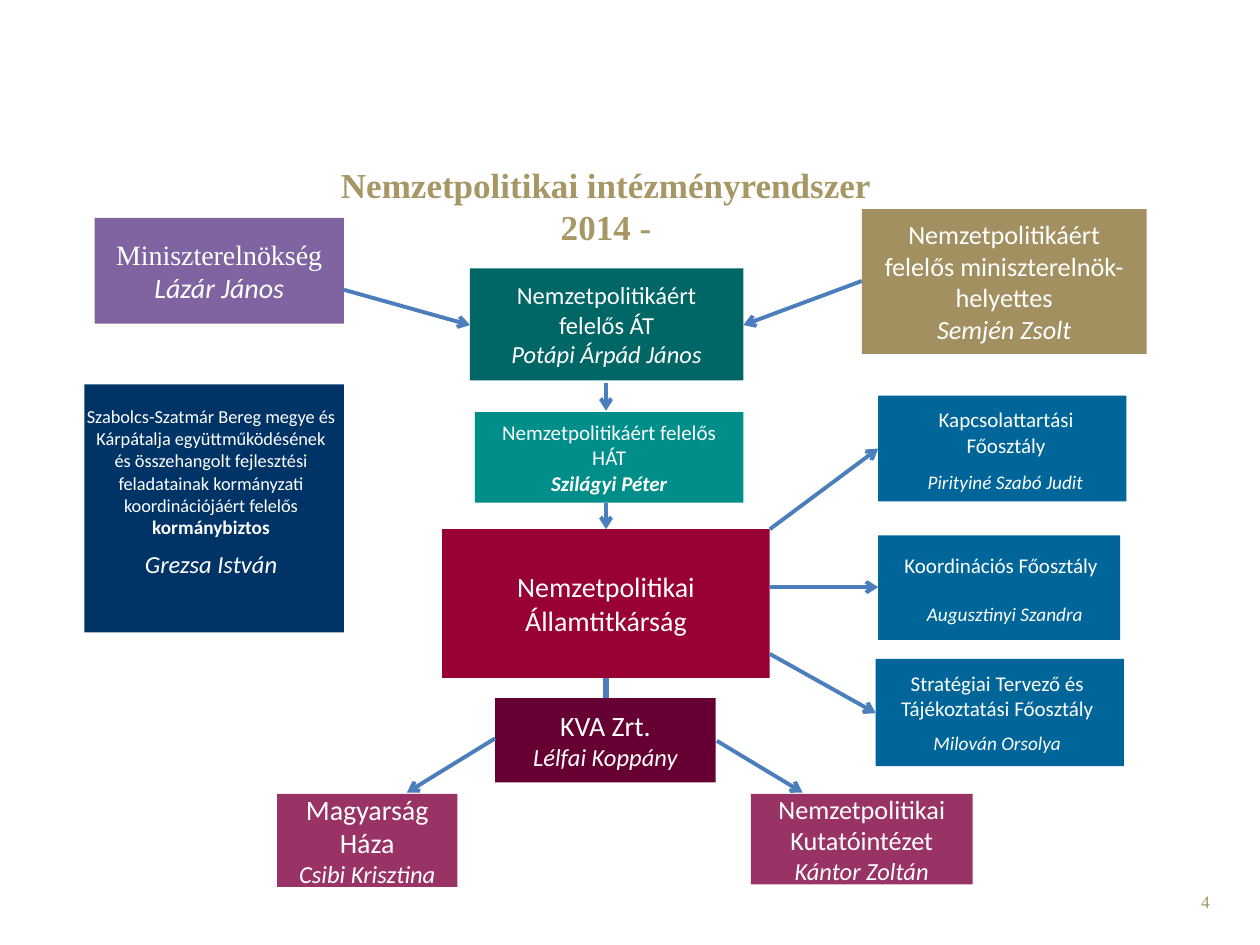
from pptx import Presentation
from pptx.dml.color import RGBColor
from pptx.enum.shapes import MSO_CONNECTOR, MSO_SHAPE
from pptx.enum.text import MSO_ANCHOR, PP_ALIGN
from pptx.oxml.ns import qn
from pptx.util import Inches, Pt
from lxml.etree import SubElement

WHITE = RGBColor(0xFF, 0xFF, 0xFF)
GOLD = RGBColor(0xA6, 0x97, 0x65)
SAND = RGBColor(0xA2, 0x90, 0x61)
VIOLET = RGBColor(0x80, 0x64, 0xA2)
RED = RGBColor(0x99, 0x00, 0x33)
WINE = RGBColor(0x66, 0x00, 0x33)
PLUM = RGBColor(0x99, 0x33, 0x66)
GREEN = RGBColor(0x00, 0x66, 0x66)
TEAL = RGBColor(0x00, 0x8E, 0x8B)
BLUE = RGBColor(0x00, 0x66, 0x99)
NAVY = RGBColor(0x00, 0x33, 0x66)
STEEL = RGBColor(0x4B, 0x7E, 0xBC)
SANS, SERIF = "Calibri", "Times New Roman"

BOXES = [
    ((0.75, 1.73, 1.98, 0.84), VIOLET,
     [("Miniszterelnökség", 16, "", SERIF), ("Lázár János", 16, "i")]),
    ((3.51, 4.2, 2.6, 1.18), RED, [("Nemzetpolitikai Államtitkárság", 16)]),
    ((6.84, 1.66, 2.26, 1.15), SAND,
     [("Nemzetpolitikáért felelős miniszterelnök-helyettes", 15),
      ("Semjén Zsolt", 15, "i")]),
    ((3.93, 5.54, 1.75, 0.67), WINE,
     [("KVA Zrt.", 16), ("Lélfai Koppány", 14, "i")]),
    ((2.2, 6.3, 1.43, 0.74), PLUM,
     [("Magyarság Háza", 16), ("Csibi Krisztina", 14, "i")]),
    ((5.96, 6.3, 1.76, 0.72), PLUM,
     [("Nemzetpolitikai Kutatóintézet", 15), ("Kántor Zoltán", 14, "i")]),
    ((3.73, 2.13, 2.17, 0.89), GREEN,
     [("Nemzetpolitikáért felelős ÁT", 14), ("Potápi Árpád János", 14, "i")]),
    ((3.77, 3.27, 2.13, 0.72), TEAL,
     [("Nemzetpolitikáért felelős HÁT", 12), ("Szilágyi Péter", 12, "bi")]),
    ((6.97, 3.14, 1.97, 0.84), BLUE, []),
    ((6.97, 4.25, 1.92, 0.83), BLUE, []),
    ((6.95, 5.23, 1.97, 0.85), BLUE, []),
    ((0.67, 3.05, 2.06, 1.97), NAVY, []),
]
LABELS = [
    ((7.17, 3.18, 1.63, 0.5), [("Kapcsolattartási Főosztály", 12)]),
    ((7.16, 3.68, 1.64, 0.29), [("Pirityiné Szabó Judit", 11, "i")]),
    ((7.02, 4.34, 1.85, 0.3), [("Koordinációs Főosztály", 12)]),
    ((7.1, 4.73, 1.75, 0.29), [("Augusztinyi Szandra", 11, "i")]),
    ((7.01, 5.27, 1.81, 0.77),
     [("Stratégiai Tervező és Tájékoztatási Főosztály", 12),
      ("Milován Orsolya", 11, "i")]),
]
ARROWS = [
    (2.73, 2.3, 3.73, 2.58), (6.84, 2.23, 5.9, 2.58),
    (3.93, 5.86, 3.23, 6.29), (5.69, 5.88, 6.37, 6.29),
    (4.81, 3.04, 4.81, 3.26), (4.81, 3.99, 4.81, 4.2),
    (6.11, 4.2, 6.97, 3.56), (6.11, 4.66, 6.97, 4.66),
    (6.11, 5.19, 6.95, 5.66),
]


def style(font, size, color=WHITE, marks="", name=SANS):
    """Set size, colour, weight, slant and typeface of a font."""
    font.size, font.name = Pt(size), name
    font.bold, font.italic = "b" in marks, "i" in marks
    font.color.rgb = color


def write(frame, lines, gap=0):
    """Fill a frame with centred paragraphs of (text, size, marks, typeface)."""
    frame.word_wrap = True
    for num, (text, size, *rest) in enumerate(lines):
        para = frame.add_paragraph() if num else frame.paragraphs[0]
        para.text = text
        para.alignment = PP_ALIGN.CENTER
        para.space_after = Pt(gap if num < len(lines) - 1 else 0)
        style(para.font, size, WHITE, *rest)


def add_box(slide, area, color, lines):
    """Add a filled rectangle with middle-anchored text."""
    box = slide.shapes.add_shape(MSO_SHAPE.RECTANGLE, *map(Inches, area))
    box.shadow.inherit = False
    box.fill.solid()
    box.fill.fore_color.rgb = color
    box.line.fill.background()
    box.text_frame.vertical_anchor = MSO_ANCHOR.MIDDLE
    write(box.text_frame, lines)


def add_label(slide, area, lines, gap=0):
    """Add a wrapped text box and return its frame."""
    frame = slide.shapes.add_textbox(*map(Inches, area)).text_frame
    write(frame, lines, gap)
    return frame


def add_line(slide, ends, width=2.25, head=True):
    """Add a straight line, with an arrowhead at its end if wanted."""
    link = slide.shapes.add_connector(MSO_CONNECTOR.STRAIGHT, *map(Inches, ends))
    link.line.color.rgb = STEEL
    link.line.width = Pt(width)
    if head:
        SubElement(link.line._get_or_add_ln(), qn("a:tailEnd"), type="arrow")
    SubElement(link._element.spPr, qn("a:effectLst"))


def add_title(slide, text):
    """Place and format the title."""
    title = slide.shapes.title
    title.left, title.top, title.width, title.height = map(
        Inches, (0.46, 1.21, 8.7, 0.69))
    frame = title.text_frame
    frame.text = text
    frame.vertical_anchor = MSO_ANCHOR.TOP
    frame.margin_top = Inches(0.09)
    para = frame.paragraphs[0]
    para.alignment = PP_ALIGN.CENTER
    style(para.font, 20, GOLD, "b", SERIF)


def add_number(slide):
    """Add the slide number at the lower right."""
    frame = add_label(slide, (7.37, 7.02, 2.33, 0.4), [("4", 10)])
    para = frame.paragraphs[0]
    para.alignment = PP_ALIGN.RIGHT
    style(para.font, 10, GOLD, "", SERIF)


def add_envoy(slide):
    """Add the text of the commissioner, with the role in bold."""
    duty = ("Szabolcs-Szatmár Bereg megye és Kárpátalja együttműködésének és "
            "összehangolt fejlesztési feladatainak kormányzati "
            "koordinációjáért felelős ")
    frame = add_label(slide, (0.59, 3.17, 2.17, 1.67),
                      [(duty, 10.5), ("Grezsa István", 14, "i")], 6)
    role = frame.paragraphs[0].add_run()
    role.text = "kormánybiztos"
    style(role.font, 11, WHITE, "b")


def main():
    """Build the chart of offices and save it."""
    deck = Presentation()
    deck.slide_width, deck.slide_height = Inches(10), Inches(7.5)
    slide = deck.slides.add_slide(deck.slide_layouts[5])
    add_title(slide, "Nemzetpolitikai intézményrendszer\v2014 -")
    for area, color, lines in BOXES:
        add_box(slide, area, color, lines)
    for ends in ARROWS:
        add_line(slide, ends)
    add_line(slide, (4.81, 5.38, 4.81, 5.54), 3, False)
    for area, lines in LABELS:
        add_label(slide, area, lines, 6)
    add_envoy(slide)
    add_number(slide)
    deck.save("out.pptx")


if __name__ == "__main__":
    main()
